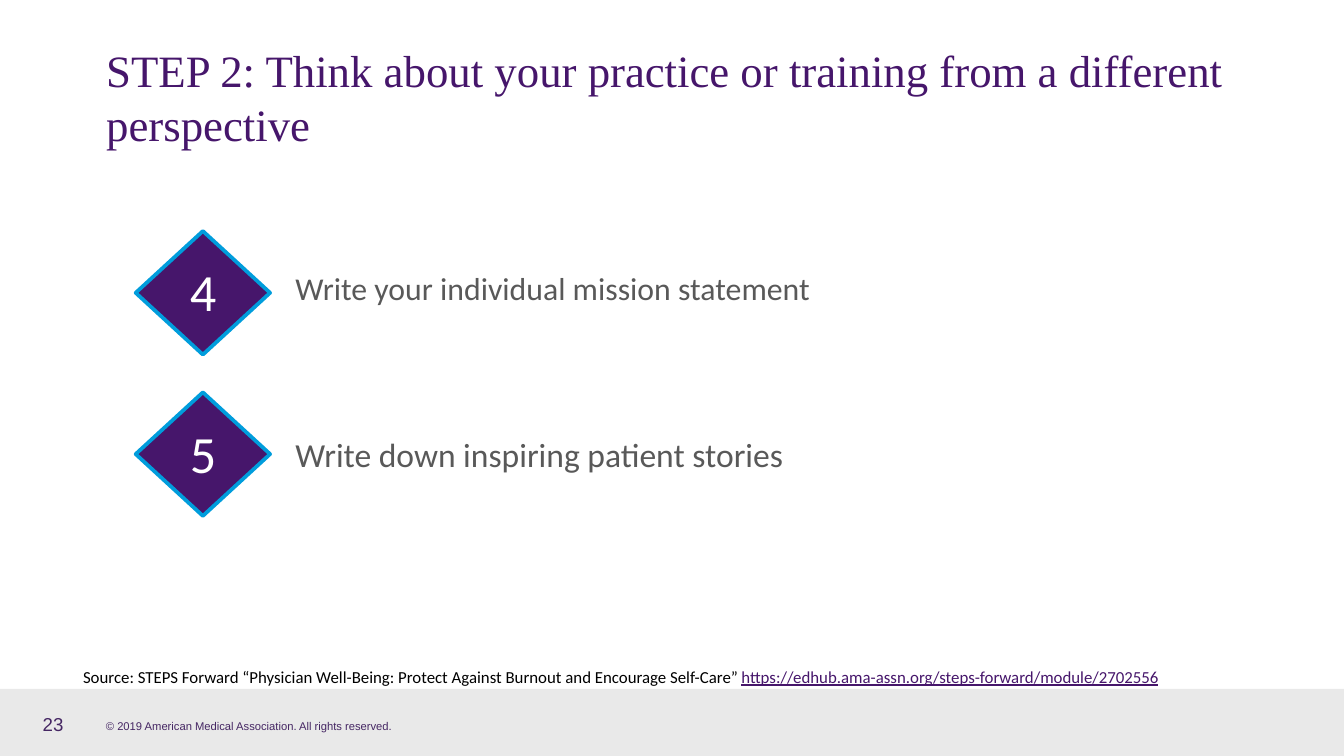
"""Build the slide on steps 4 and 5 of a different perspective."""
from lxml import etree
from pptx import Presentation
from pptx.dml.color import RGBColor
from pptx.enum import shapes, text
from pptx.oxml.ns import qn
from pptx.util import Pt

PURPLE = RGBColor(0x46, 0x16, 0x6B)
VIOLET = RGBColor(0x45, 0x26, 0x63)
BLUE = RGBColor(0x00, 0x9D, 0xDC)
GRAY = RGBColor(0x59, 0x59, 0x59)
BAND = RGBColor(0xE0, 0xE0, 0xE0)
WHITE = RGBColor(0xFF, 0xFF, 0xFF)
BLACK = RGBColor(0, 0, 0)


def style(run, size, face, color):
    run.font.size = Pt(size)
    run.font.name = face
    run.font.color.rgb = color


def label(words, left, top, width, height, size, face, color):
    box = slide.shapes.add_textbox(Pt(left), Pt(top), Pt(width), Pt(height))
    frame = box.text_frame
    frame.word_wrap = True
    frame.text = words
    style(frame.paragraphs[0].runs[0], size, face, color)
    return frame


deck = Presentation()
deck.slide_width, deck.slide_height = Pt(720), Pt(405)
slide = deck.slides.add_slide(deck.slide_layouts[5])

band = slide.shapes.add_shape(shapes.MSO_SHAPE.RECTANGLE, 0, Pt(369), Pt(720), Pt(36))
band.shadow.inherit = False
band.fill.solid()
band.fill.fore_color.rgb = BAND
band.line.fill.background()
shade = band.fill._xPr.find(qn("a:solidFill"))[0]
etree.SubElement(shade, qn("a:alpha")).set("val", "70000")

label("© 2019 American Medical Association. All rights reserved.",
      49.7, 381.6, 198.7, 14.4, 6, "Arial", VIOLET)

title = slide.shapes.title
title.left, title.top, title.width, title.height = Pt(49.7), Pt(16.6), Pt(620.6), Pt(70.6)
frame = title.text_frame
frame.text = "STEP 2: Think about your practice or training from a different perspective"
frame.auto_size = text.MSO_AUTO_SIZE.NONE
frame.vertical_anchor = text.MSO_ANCHOR.MIDDLE
frame.paragraphs[0].alignment = text.PP_ALIGN.LEFT
style(frame.paragraphs[0].runs[0], 24, "Times New Roman", PURPLE)

steps = [
    ("4", "Write your individual mission statement", 123.8, 11.5, 16.6, 17),
    ("5", "Write down inspiring patient stories", 210.2, 12.2, 18.7, 18),
]
for digit, words, top, drop, dip, size in steps:
    gem = slide.shapes.add_shape(shapes.MSO_SHAPE.DIAMOND, Pt(72.7), Pt(top), Pt(72), Pt(66.2))
    gem.shadow.inherit = False
    gem.fill.solid()
    gem.fill.fore_color.rgb = PURPLE
    gem.line.color.rgb = BLUE
    gem.line.width = Pt(2)
    mark = label(digit, 84, top + drop, 49.7, 41, 28, "Calibri", WHITE)
    mark.paragraphs[0].alignment = text.PP_ALIGN.CENTER
    label(words, 151.2, top + dip, 494.6, 28.1, size, "Calibri", GRAY)

page = label("23", 15.8, 377.3, 72.7, 21.6, 10, "Arial", VIOLET)
page.vertical_anchor = text.MSO_ANCHOR.MIDDLE

source = label("Source: STEPS Forward “Physician Well-Being: Protect Against Burnout and Encourage Self-Care” ",
               37.4, 353.5, 606.2, 18, 9, "Calibri", BLACK)
link = source.paragraphs[0].add_run()
link.text = "https://edhub.ama-assn.org/steps-forward/module/2702556"
style(link, 9, "Calibri", PURPLE)
link.font.underline = True

deck.save("out.pptx")
